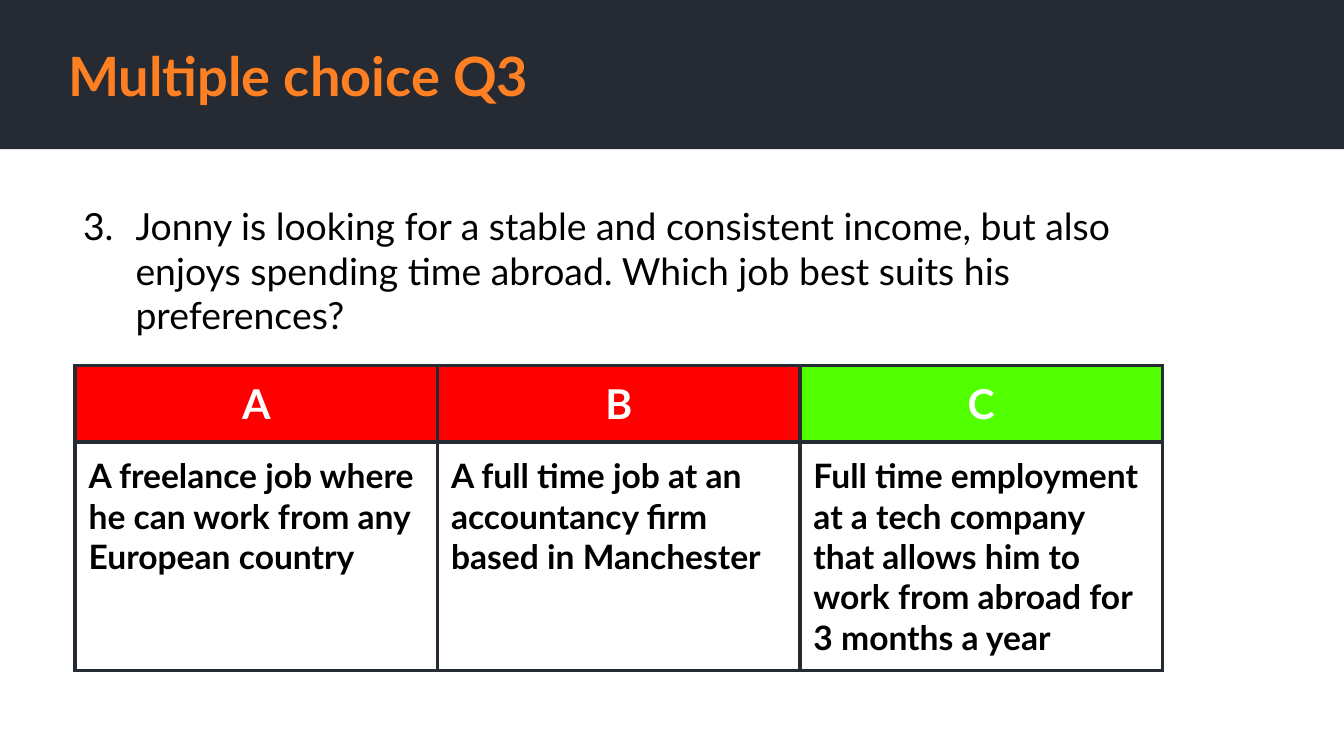
from lxml import etree
from pptx import Presentation
from pptx import util as u
from pptx.dml.color import RGBColor
from pptx.enum import shapes, text
from pptx.oxml.ns import qn

NAVY = RGBColor(0x26, 0x2A, 0x33)
ORANGE = RGBColor(0xFF, 0x80, 0x22)
RED = RGBColor(0xFF, 0x00, 0x00)
GREEN = RGBColor(0x51, 0xFF, 0x00)
WHITE = RGBColor(0xFF, 0xFF, 0xFF)
BLACK = RGBColor(0x00, 0x00, 0x00)
FONT = "Lato"
INSET = u.Inches(0.1)
ANSWERS = [
    ("A", RED, "A freelance job where he can work from any European country"),
    ("B", RED, "A full time job at an accountancy firm based in Manchester"),
    ("C", GREEN, "Full time employment at a tech company that allows him to "
                 "work from abroad for 3 months a year"),
]


def add_run(paragraph, words, size, color, bold=False):
    """Append a styled run to the paragraph."""
    run = paragraph.add_run()
    run.text = words
    run.font.name = FONT
    run.font.size = u.Pt(size)
    run.font.bold = bold
    run.font.color.rgb = color


def set_insets(container):
    """Give a text frame or table cell equal margins."""
    container.margin_left = container.margin_right = INSET
    container.margin_top = container.margin_bottom = INSET


def add_text_frame(slide, left, top, width, height):
    """Add a wrapping text box and return its frame."""
    box = slide.shapes.add_textbox(left, top, width, height)
    frame = box.text_frame
    frame.word_wrap = True
    set_insets(frame)
    return frame


def add_header(slide, left, top, width, height):
    """Draw the dark band with the slide title."""
    band = slide.shapes.add_shape(
        shapes.MSO_SHAPE.RECTANGLE, left, top, width, height)
    band.shadow.inherit = False
    band.fill.solid()
    band.fill.fore_color.rgb = NAVY
    band.line.fill.background()
    frame = add_text_frame(slide, left + u.Inches(0.41), top + u.Inches(0.28),
                           u.Inches(8.74), u.Inches(0.56))
    frame.vertical_anchor = text.MSO_ANCHOR.MIDDLE
    add_run(frame.paragraphs[0], "Multiple choice Q3", 29, ORANGE, True)


def add_question(slide, left, top, width, height):
    """Write the numbered question."""
    frame = add_text_frame(slide, left, top, width, height)
    frame.auto_size = text.MSO_AUTO_SIZE.SHAPE_TO_FIT_TEXT
    paragraph = frame.paragraphs[0]
    properties = paragraph._p.get_or_add_pPr()
    properties.set("marL", str(u.Inches(0.5)))
    properties.set("indent", str(u.Inches(-0.39)))
    bullet_color = etree.SubElement(properties, qn("a:buClr"))
    etree.SubElement(bullet_color, qn("a:srgbClr"), val=str(BLACK))
    etree.SubElement(properties, qn("a:buFont"), typeface=FONT)
    etree.SubElement(properties, qn("a:buAutoNum"),
                     type="arabicPeriod", startAt="3")
    add_run(paragraph, "Jonny is looking for a stable and consistent income, "
            "but also enjoys spending time abroad. Which job best suits his "
            "preferences?", 20, BLACK)


def set_borders(cell):
    """Outline all four sides of a cell."""
    properties = cell._tc.get_or_add_tcPr()
    for side in ("lnL", "lnR", "lnT", "lnB"):
        line = etree.SubElement(properties, qn(f"a:{side}"),
                                w=str(u.Pt(2.25)))
        fill = etree.SubElement(line, qn("a:solidFill"))
        etree.SubElement(fill, qn("a:srgbClr"), val=str(NAVY))


def add_answers(slide, left, top, width, height):
    """Build the table of answers, one column each."""
    table = slide.shapes.add_table(
        2, len(ANSWERS), left, top, width, height).table
    table.first_row = table.horz_banding = False
    table.rows[0].height = u.Inches(0.57)
    table.rows[1].height = height - u.Inches(0.57)
    for column, (letter, color, answer) in enumerate(ANSWERS):
        heading, body = table.cell(0, column), table.cell(1, column)
        for cell in (heading, body):
            set_insets(cell)
            set_borders(cell)
        heading.fill.solid()
        heading.fill.fore_color.rgb = color
        body.fill.background()
        paragraph = heading.text_frame.paragraphs[0]
        paragraph.alignment = text.PP_ALIGN.CENTER
        add_run(paragraph, letter, 22, WHITE, True)
        add_run(body.text_frame.paragraphs[0], answer, 18, BLACK, True)


def main():
    """Create the presentation and save it."""
    presentation = Presentation()
    presentation.slide_width = u.Inches(10)
    presentation.slide_height = presentation.slide_width * 9 // 16
    slide = presentation.slides.add_slide(presentation.slide_layouts[6])
    add_header(slide, 0, 0, presentation.slide_width, u.Inches(1.11))
    add_answers(slide, u.Inches(0.56), u.Inches(2.72),
                u.Inches(8.09), u.Inches(1.97))
    add_question(slide, u.Inches(0.41), u.Inches(1.41),
                 u.Inches(8.38), u.Inches(1.21))
    presentation.save("out.pptx")


if __name__ == "__main__":
    main()
